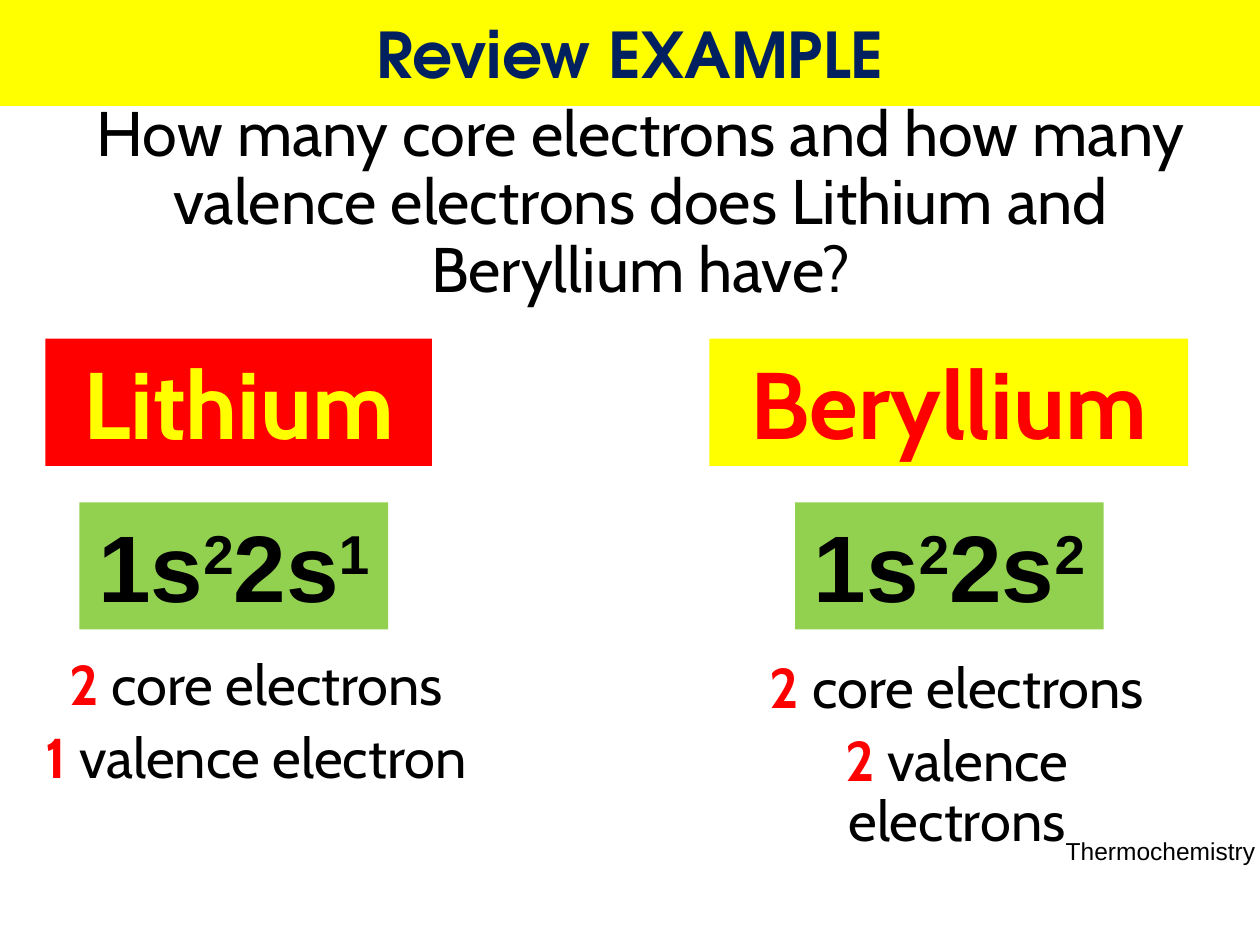
from dataclasses import dataclass

import pptx
import pptx.dml.color
import pptx.enum.shapes
import pptx.enum.text
import pptx.util

Pt = pptx.util.Pt
RED, YELLOW, GREEN, NAVY, BLACK = "FF0000", "FFFF00", "92D050", "002060", "000000"


@dataclass
class Box:
    left: float
    top: float
    width: float
    height: float


@dataclass
class Run:
    text: str
    size: float
    font: str = "Cabin"
    color: str = BLACK
    bold: bool = False
    raised: bool = False


@dataclass
class Element:
    name: str
    name_box: Box
    name_fill: str
    name_color: str
    shells: list[tuple[str, str]]
    shells_left: float
    counts: list[tuple[str, str]]
    counts_box: Box


def rgb(color: str) -> pptx.dml.color.RGBColor:
    return pptx.dml.color.RGBColor.from_string(color)


def fill_text(shape, paragraphs: list[list[Run]], wrap: bool = True,
              spacing: float | None = None, gap: float = 0,
              anchor=pptx.enum.text.MSO_ANCHOR.TOP) -> None:
    frame = shape.text_frame
    frame.auto_size = pptx.enum.text.MSO_AUTO_SIZE.NONE
    frame.word_wrap = wrap
    frame.vertical_anchor = anchor
    for index, runs in enumerate(paragraphs):
        paragraph = frame.add_paragraph() if index else frame.paragraphs[0]
        paragraph.alignment = pptx.enum.text.PP_ALIGN.CENTER
        paragraph.line_spacing = spacing
        paragraph.space_before = Pt(gap if index else 0)
        for part in runs:
            run = paragraph.add_run()
            run.text = part.text
            run.font.size = Pt(part.size)
            run.font.name = part.font
            run.font.bold = part.bold
            run.font.color.rgb = rgb(part.color)
            if part.raised:
                run.font._element.set("baseline", "30000")


def place(box: Box) -> tuple:
    return Pt(box.left), Pt(box.top), Pt(box.width), Pt(box.height)


def add_text(slide, box: Box, paragraphs: list[list[Run]], **options) -> None:
    fill_text(slide.shapes.add_textbox(*place(box)), paragraphs, **options)


def add_label(slide, box: Box, fill: str, runs: list[Run]) -> None:
    label = slide.shapes.add_shape(
        pptx.enum.shapes.MSO_SHAPE.RECTANGLE, *place(box))
    label.shadow.inherit = False
    label.fill.solid()
    label.fill.fore_color.rgb = rgb(fill)
    label.line.fill.background()
    fill_text(label, [runs], wrap=False)


def add_element(slide, element: Element) -> None:
    # Element name
    add_label(slide, element.name_box, element.name_fill,
              [Run(element.name, 54, color=element.name_color, bold=True)])
    # Electron configuration
    configuration = []
    for shell, electrons in element.shells:
        configuration += [Run(shell, 54, "Arial", bold=True),
                          Run(electrons, 54, "Arial", bold=True, raised=True)]
    add_label(slide, Box(element.shells_left, 287, 176.4, 72.7), GREEN,
              configuration)
    # Core and valence counts
    add_text(slide, element.counts_box,
             [[Run(number, 32, color=RED, bold=True), Run(kind, 32)]
              for number, kind in element.counts],
             spacing=0.9, gap=7)


ELEMENTS = [
    Element("Lithium", Box(25.9, 193.5, 221, 72.7), RED, YELLOW,
            [("1s", "2"), ("2s", "1")], 45.4,
            [("2", " core electrons"), ("1", " valence electron")],
            Box(12.2, 372.2, 268.6, 85)),
    Element("Beryllium", Box(405.4, 193.5, 273.6, 72.7), YELLOW, RED,
            [("1s", "2"), ("2s", "2")], 454.3,
            [("2", " core electrons"), ("2", " valence electrons")],
            Box(412.6, 373.7, 268.6, 85)),
]


def main() -> None:
    deck = pptx.Presentation()
    deck.slide_width, deck.slide_height = Pt(720), Pt(540)
    slide = deck.slides.add_slide(deck.slide_layouts.get_by_name("Title Only"))

    # Title band
    title = slide.shapes.title
    title.left, title.top, title.width, title.height = place(Box(0, 0, 720, 60.5))
    title.fill.solid()
    title.fill.fore_color.rgb = rgb(YELLOW)
    fill_text(title, [[Run("Review EXAMPLE", 36, "TeX Gyre Adventor", NAVY, True)]],
              anchor=pptx.enum.text.MSO_ANCHOR.MIDDLE)

    # Course tag
    add_text(slide, Box(602, 474, 122.4, 24),
             [[Run("Thermochemistry", 14, "Arial")]], wrap=False)

    # Question
    add_text(slide, Box(30.2, 54.7, 671.8, 131.8),
             [[Run("How many core electrons and how many valence electrons "
                   "does Lithium and Beryllium have?", 36)]], spacing=0.9)

    # Answers
    for element in ELEMENTS:
        add_element(slide, element)

    deck.save("out.pptx")


if __name__ == "__main__":
    main()
